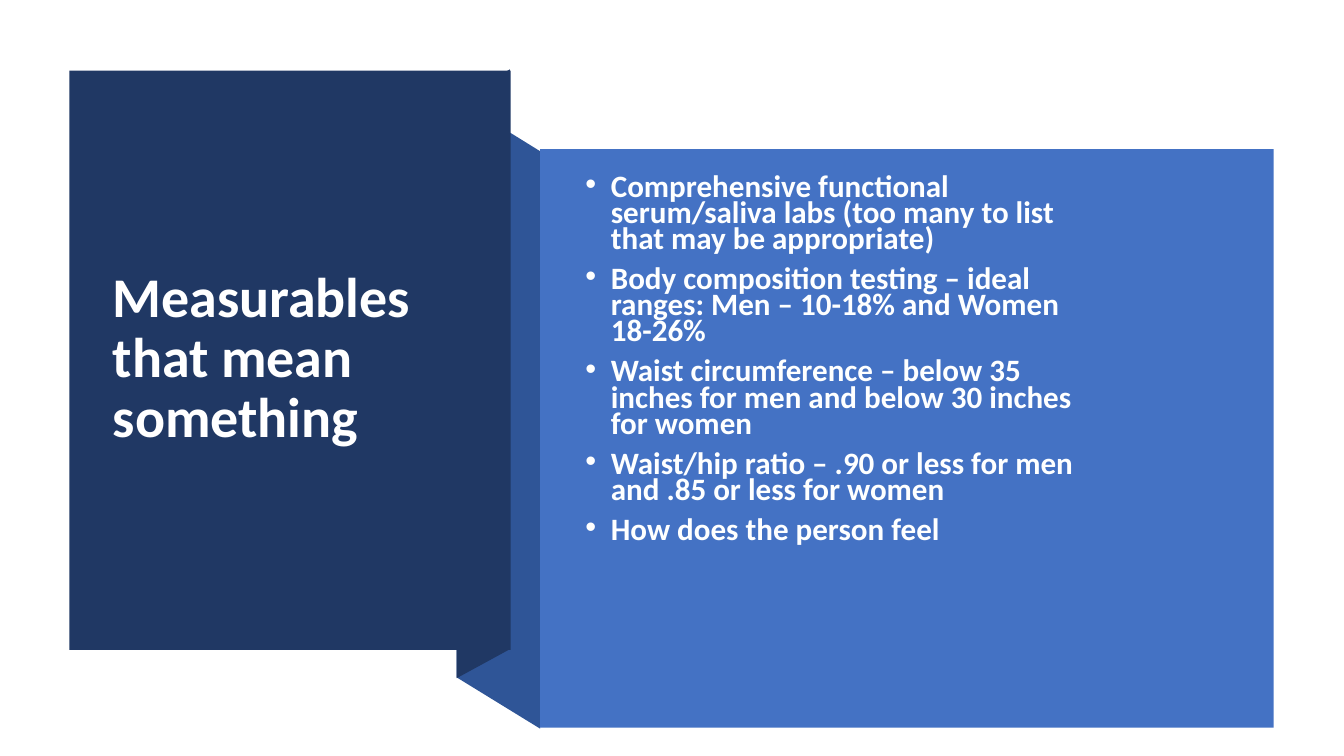
"""Build the slide on measurables: a folded ribbon with a title and a list."""
import pptx
import pptx.dml.color
import pptx.enum.shapes
import pptx.enum.text
import pptx.util

Cm = pptx.util.Cm
Pt = pptx.util.Pt

TITLE = "Measurables that mean something"
ITEMS = [
    "Comprehensive functional serum/saliva labs (too many to list that may be appropriate)",
    "Body composition testing – ideal ranges: Men – 10-18% and Women 18-26%",
    "Waist circumference – below 35 inches for men and below 30 inches for women",
    "Waist/hip ratio – .90 or less for men and .85 or less for women",
    "How does the person feel",
]
NAVY, MID, BLUE = "203864", "2F5597", "4472C4"
FOLDS = [
    (MID, [(13.61, 18.36), (11.51, 17.07), (11.51, 2.51), (13.61, 3.81)]),
    (NAVY, [(12.85, 16.36), (11.51, 17.09), (11.51, 2.49), (12.85, 1.75)]),
]
PANELS = [
    (NAVY, (1.75, 1.78, 11.12, 14.6)),
    (BLUE, (13.61, 3.76, 18.49, 14.58)),
]
TITLE_BOX = (2.59, 2.72, 9.42, 12.67)
LIST_BOX = (14.5, 4.78, 13.36, 9.65)


def color(code):
    return pptx.dml.color.RGBColor.from_string(code)


def paint(shape, code):
    shape.shadow.inherit = False
    shape.fill.solid()
    shape.fill.fore_color.rgb = color(code)
    shape.line.fill.background()


def place(holder, box):
    holder.left, holder.top, holder.width, holder.height = map(Cm, box)
    frame = holder.text_frame
    frame.word_wrap = True
    frame.auto_size = pptx.enum.text.MSO_AUTO_SIZE.NONE
    frame.vertical_anchor = pptx.enum.text.MSO_ANCHOR.MIDDLE
    holder.element.getparent().append(holder.element)
    return frame


def style(para, size, code, pitch):
    para.alignment = pptx.enum.text.PP_ALIGN.LEFT
    para.line_spacing = pitch
    for run in para.runs:
        run.font.name = "Calibri"
        run.font.size = Pt(size)
        run.font.bold = True
        run.font.color.rgb = color(code)


def main():
    deck = pptx.Presentation()
    deck.slide_width, deck.slide_height = Cm(33.87), Cm(19.05)
    slide = deck.slides.add_slide(deck.slide_layouts[1])
    shapes = slide.shapes

    for code, points in FOLDS:
        start, *rest = [(Cm(x), Cm(y)) for x, y in points]
        pen = shapes.build_freeform(*start)
        pen.add_line_segments(rest, close=True)
        paint(pen.convert_to_shape(), code)
    for code, box in PANELS:
        kind = pptx.enum.shapes.MSO_SHAPE.RECTANGLE
        paint(shapes.add_shape(kind, *map(Cm, box)), code)

    frame = place(shapes.title, TITLE_BOX)
    frame.text = TITLE
    style(frame.paragraphs[0], 40, "FFFFFF", 0.9)

    frame = place(slide.placeholders[1], LIST_BOX)
    frame.margin_bottom = Cm(1.14)
    frame.text = "\n".join(ITEMS)
    for para in frame.paragraphs:
        style(para, 22.2, "FEFFFF", 0.7)
        para.space_before = Pt(10)
        props = para._p.get_or_add_pPr()
        props.set("marL", str(Cm(0.64)))
        props.set("indent", str(-Cm(0.64)))

    deck.save("out.pptx")


if __name__ == "__main__":
    main()
